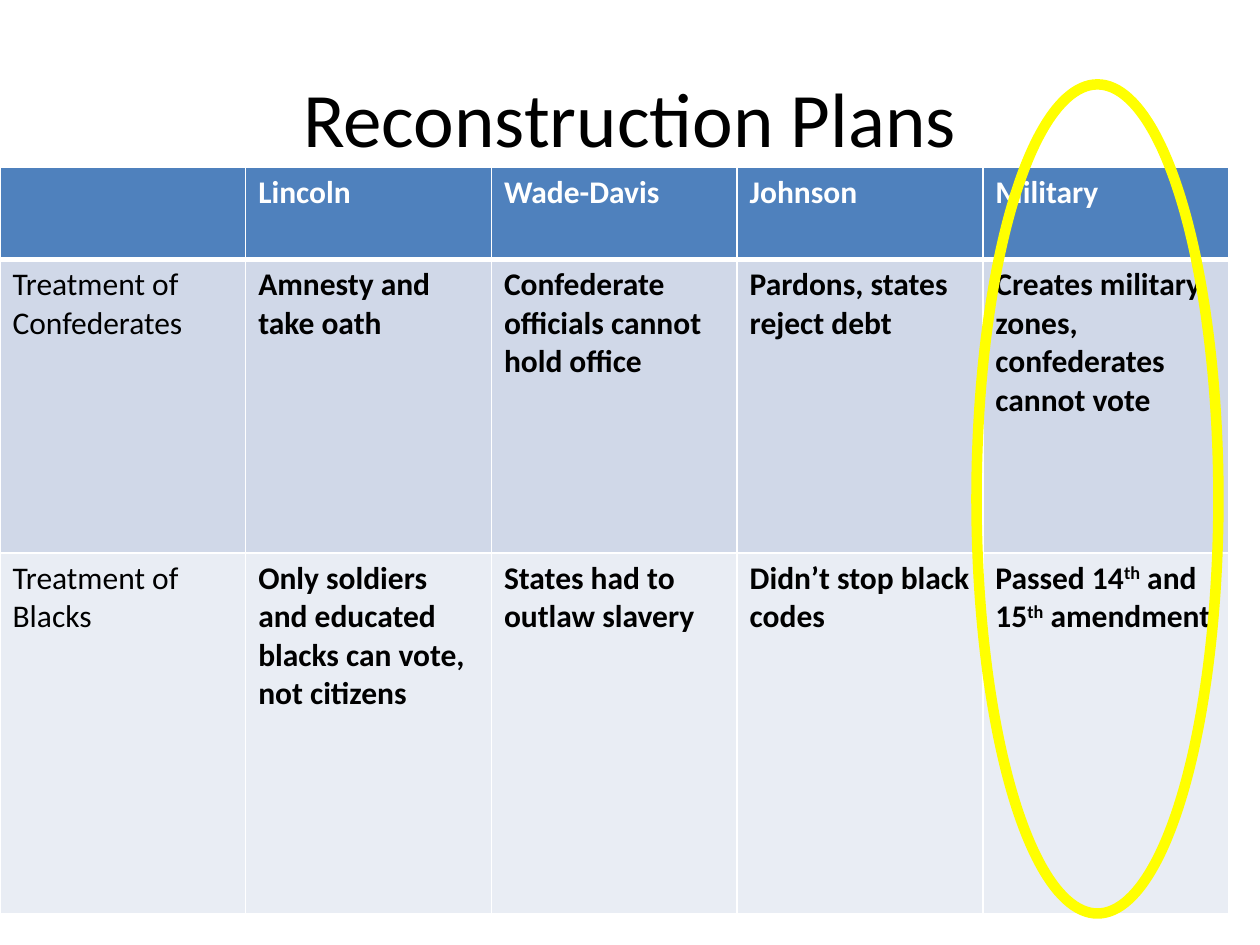
from lxml.etree import SubElement as Sub
from pptx import Presentation
from pptx.dml.color import RGBColor
from pptx.enum.shapes import MSO_SHAPE as Shape
from pptx.enum.text import MSO_ANCHOR as Anchor, PP_ALIGN as Align
from pptx.oxml.ns import qn
from pptx.util import Inches, Pt


def color(code):
    return RGBColor.from_string(code)


def write(para, text, code, **form):
    """Add text to a paragraph; parts between carets are raised."""
    for i, part in enumerate(text.split("^")):
        run = para.add_run()
        run.text = part
        run.font.color.rgb = color(code)
        for key, val in {"name": "Calibri", **form}.items():
            setattr(run.font, key, val)
        if i % 2:
            run.font._element.set("baseline", "30000")


prs = Presentation()
prs.slide_width, prs.slide_height = Inches(10), Inches(7.5)
slide = prs.slides.add_slide(prs.slide_layouts[6])

# Title
box = slide.shapes.add_textbox(Inches(0.5), Inches(0.3), Inches(9), Inches(1.25))
frame = box.text_frame
frame.word_wrap = True
frame.vertical_anchor = Anchor.MIDDLE
title = frame.paragraphs[0]
title.alignment = Align.CENTER
write(title, "Reconstruction Plans", "000000", size=Pt(44))

# Table of plans: height, fill, text colour, cell texts
rows = [
    (0.73, "4F81BD", "FFFFFF",
     ["", "Lincoln", "Wade-Davis", "Johnson", "Military"]),
    (2.33, "D0D8E8", "000000",
     ["Treatment of Confederates", "Amnesty and take oath",
      "Confederate officials cannot hold office",
      "Pardons, states reject debt",
      "Creates military zones, confederates cannot vote"]),
    (2.86, "E9EDF4", "000000",
     ["Treatment of Blacks",
      "Only soldiers and educated blacks can vote, not citizens",
      "States had to outlaw slavery", "Didn’t stop black codes",
      "Passed 14^th^ and 15^th^ amendment"]),
]
table = slide.shapes.add_table(
    3, 5, Inches(0), Inches(1.33), Inches(9.75), Inches(5.92)).table
for col in table.columns:
    col.width = Inches(1.95)

for r, (high, fill, ink, texts) in enumerate(rows):
    table.rows[r].height = Inches(high)
    for c, text in enumerate(texts):
        cell = table.cell(r, c)
        # White borders, thick under the header
        props = cell._tc.get_or_add_tcPr()
        for side in "LRTB":
            thick = (r, side) in [(0, "B"), (1, "T")]
            line = Sub(props, qn(f"a:ln{side}"), w=str(Pt(3 if thick else 1)))
            Sub(Sub(line, qn("a:solidFill")), qn("a:srgbClr"), val="FFFFFF")
        cell.fill.solid()
        cell.fill.fore_color.rgb = color(fill)
        if text:
            write(cell.text_frame.paragraphs[0], text, ink,
                  size=Pt(18), bold=r == 0 or c > 0)

# Ring around the last plan
ring = slide.shapes.add_shape(
    Shape.OVAL, Inches(7.75), Inches(0.67), Inches(1.92), Inches(6.58))
ring.shadow.inherit = False
ring.fill.background()
ring.line.color.rgb = color("FFFF00")
ring.line.width = Pt(6)

prs.save("out.pptx")
